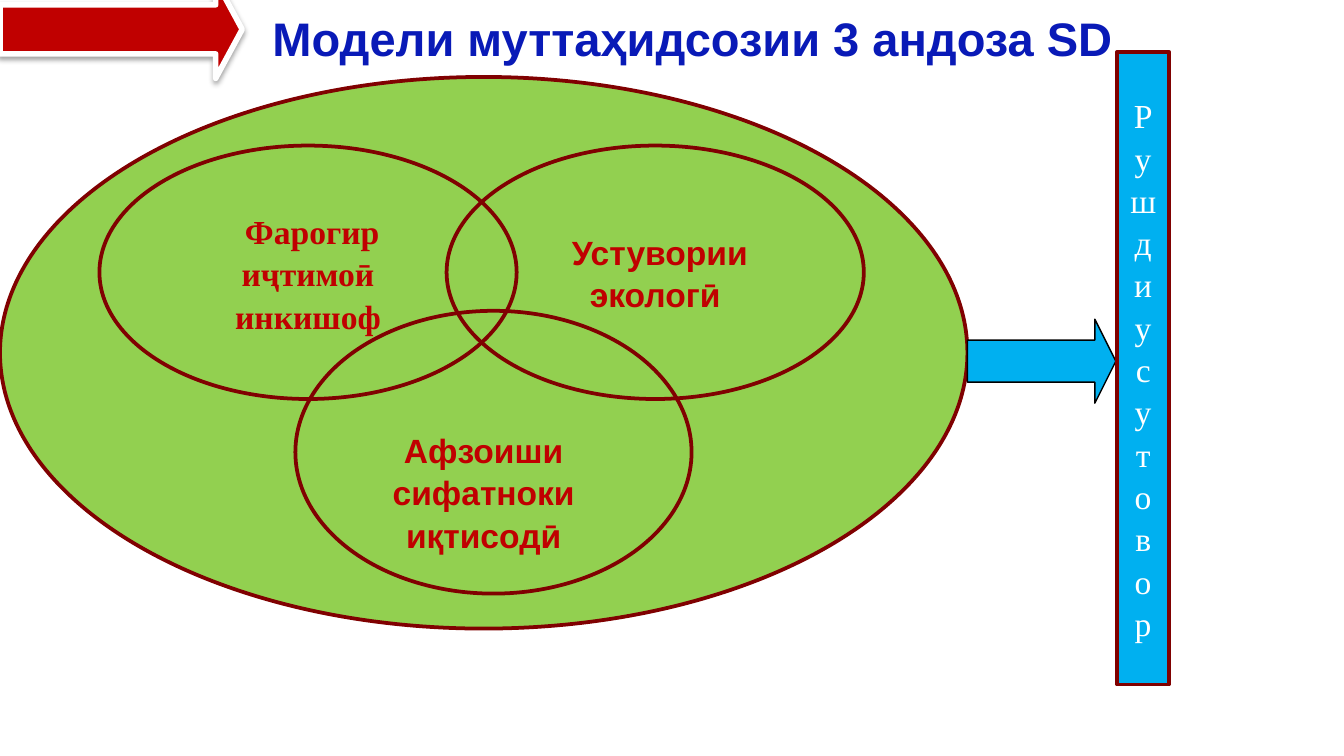
from lxml import etree
from pptx import Presentation
from pptx.dml.color import RGBColor
from pptx.enum.shapes import MSO_SHAPE as SHAPE
from pptx.enum.text import MSO_ANCHOR as ANCHOR, PP_ALIGN as ALIGN
from pptx.oxml.ns import qn
from pptx.util import Pt

PX = 9525
COLORS = {
    "title": "091AB7", "green": "92D050", "maroon": "800101", "red": "C00000",
    "sky": "00B0F0", "black": "000000", "white": "FFFFFF",
}
SANS, SERIF = "Arial", "Times New Roman"


def add_part(kind, box, fill, line, width):
    part = slide.shapes.add_shape(kind, *(n * PX for n in box))
    part.shadow.inherit = False
    if fill:
        part.fill.solid()
        part.fill.fore_color.rgb = RGBColor.from_string(COLORS[fill])
    else:
        part.fill.background()
    part.line.color.rgb = RGBColor.from_string(COLORS[line])
    part.line.width = Pt(width)
    return part


def write(part, text, font, size, color, bold, align, anchor=ANCHOR.MIDDLE, spacing=1.05):
    frame = part.text_frame
    frame.word_wrap = True
    frame.vertical_anchor = anchor
    frame.text = text
    for paragraph in frame.paragraphs:
        paragraph.alignment = align
        paragraph.line_spacing = spacing
        for run in paragraph.runs:
            run.font.name = font
            run.font.size = Pt(size)
            run.font.bold = bold
            run.font.color.rgb = RGBColor.from_string(COLORS[color])


prs = Presentation()
prs.slide_width, prs.slide_height = 960 * PX, 540 * PX
slide = prs.slides.add_slide(prs.slide_layouts[5])

title = slide.shapes.title
title.left, title.top, title.width, title.height = (n * PX for n in (185, 7, 735, 40))
write(title, "Модели муттаҳидсозии 3 андоза SD", SANS, 25.2, "title", True, ALIGN.LEFT, spacing=1.0)

model = add_part(SHAPE.FLOWCHART_CONNECTOR, (0, 55, 691, 394), "green", "maroon", 2)
write(model, "Афзоиши\nсифатноки\nиқтисодӣ", SANS, 18, "red", True, ALIGN.CENTER, ANCHOR.BOTTOM)
model.text_frame.margin_bottom = -5 * PX

ecology = add_part(SHAPE.FLOWCHART_CONNECTOR, (319, 104, 298, 181), None, "maroon", 2)
write(ecology, " Устувории экологӣ", SANS, 18, "red", True, ALIGN.CENTER)

economy = add_part(SHAPE.FLOWCHART_CONNECTOR, (211, 222, 283, 202), None, "maroon", 2)

result_arrow = add_part(SHAPE.RIGHT_ARROW, (691, 228, 106, 60), "sky", "black", 0.75)
result_arrow.adjustments[1] = 0.25

development = add_part(SHAPE.RECTANGLE, (798, 37, 37, 452), "sky", "maroon", 2)
write(development, "Рушди усутовор", SERIF, 18, "white", False, ALIGN.CENTER)

society = add_part(SHAPE.FLOWCHART_CONNECTOR, (71, 104, 298, 181), None, "maroon", 2)
write(society, " Фарогир\nиҷтимоӣ\nинкишоф", SERIF, 18, "red", True, ALIGN.CENTER)

title_arrow = add_part(SHAPE.RIGHT_ARROW, (0, -14, 173, 70), "red", "white", 3)
title_arrow.adjustments[1] = 0.27
effects = title_arrow._element.spPr.find(qn("a:effectLst"))
shadow = etree.SubElement(effects, qn("a:outerShdw"), blurRad=str(Pt(3.1)), dist=str(Pt(1.6)),
                          dir="5400000", rotWithShape="0")
shade = etree.SubElement(shadow, qn("a:srgbClr"), val=COLORS["black"])
etree.SubElement(shade, qn("a:alpha"), val="38000")

prs.save("out.pptx")
